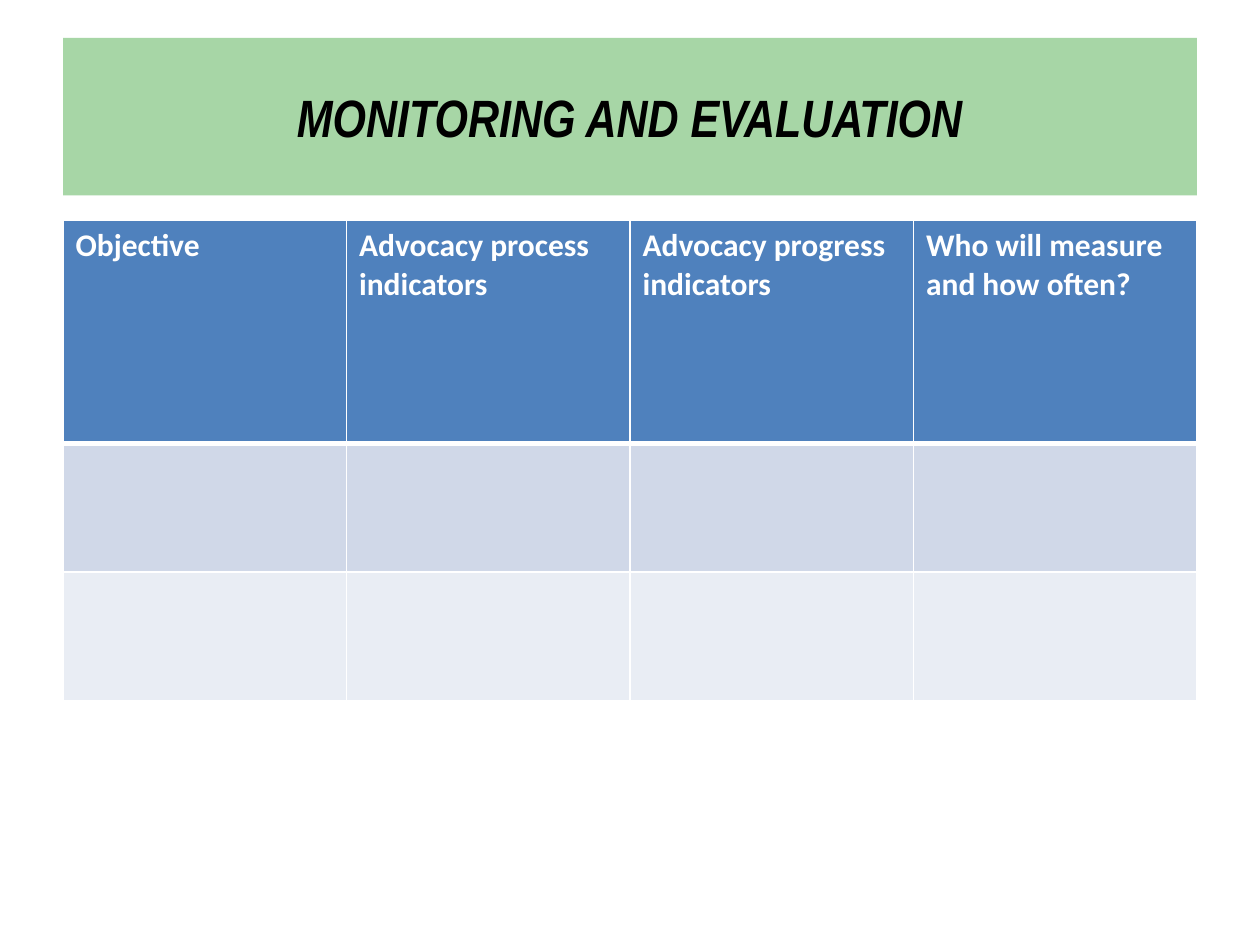
import lxml.etree
import pptx
import pptx.dml.color
import pptx.enum.text
import pptx.oxml.ns
import pptx.util

PX = 9144
HEADINGS = [
    "Objective",
    "Advocacy process indicators",
    "Advocacy progress indicators",
    "Who will measure and how often?",
]
ROW_HEIGHTS = [177, 102, 102]
ROW_FILLS = ["4F81BD", "D0D8E8", "E9EDF4"]
COLUMN_WIDTH = 225
BORDER_COLOR = "FFFFFF"


def color(value):
    return pptx.dml.color.RGBColor.from_string(value)


def write_text(frame, text, *, font, size, fill, align, italic=False):
    para = frame.paragraphs[0]
    para.alignment = align
    span = para.add_run()
    span.text = text
    span.font.name = font
    span.font.size = pptx.util.Pt(size)
    span.font.bold = True
    span.font.italic = italic
    span.font.color.rgb = color(fill)


deck = pptx.Presentation()
deck.slide_width = 1000 * PX
deck.slide_height = 750 * PX
page = deck.slides.add_slide(deck.slide_layouts[5])

title = page.shapes.title
title.left, title.top = 50 * PX, 30 * PX
title.width, title.height = 900 * PX, 125 * PX
title.fill.solid()
title.fill.fore_color.rgb = color("A7D6A6")
title.text_frame.vertical_anchor = pptx.enum.text.MSO_ANCHOR.MIDDLE
write_text(title.text_frame, "MONITORING AND EVALUATION", font="Arial Narrow", size=30,
           fill="000000", align=pptx.enum.text.PP_ALIGN.CENTER, italic=True)

table = page.shapes.add_table(
    len(ROW_HEIGHTS), len(HEADINGS), 50 * PX, 175 * PX,
    COLUMN_WIDTH * len(HEADINGS) * PX, sum(ROW_HEIGHTS) * PX).table
for column in table.columns:
    column.width = COLUMN_WIDTH * PX

for row_index, (height, row_fill) in enumerate(zip(ROW_HEIGHTS, ROW_FILLS)):
    row = table.rows[row_index]
    row.height = height * PX
    widths = {"lnL": 1, "lnR": 1, "lnT": 3 if row_index == 1 else 1, "lnB": 3 if row_index == 0 else 1}
    for cell in row.cells:
        cell.fill.solid()
        cell.fill.fore_color.rgb = color(row_fill)
        properties = cell._tc.get_or_add_tcPr()
        for position, (edge, width) in enumerate(widths.items()):
            line = lxml.etree.Element(pptx.oxml.ns.qn(f"a:{edge}"), w=str(pptx.util.Pt(width)))
            solid = lxml.etree.SubElement(line, pptx.oxml.ns.qn("a:solidFill"))
            lxml.etree.SubElement(solid, pptx.oxml.ns.qn("a:srgbClr"), val=BORDER_COLOR)
            properties.insert(position, line)

for cell, heading in zip(table.rows[0].cells, HEADINGS):
    write_text(cell.text_frame, heading, font="Calibri", size=18,
               fill="FFFFFF", align=pptx.enum.text.PP_ALIGN.LEFT)

deck.save("out.pptx")
